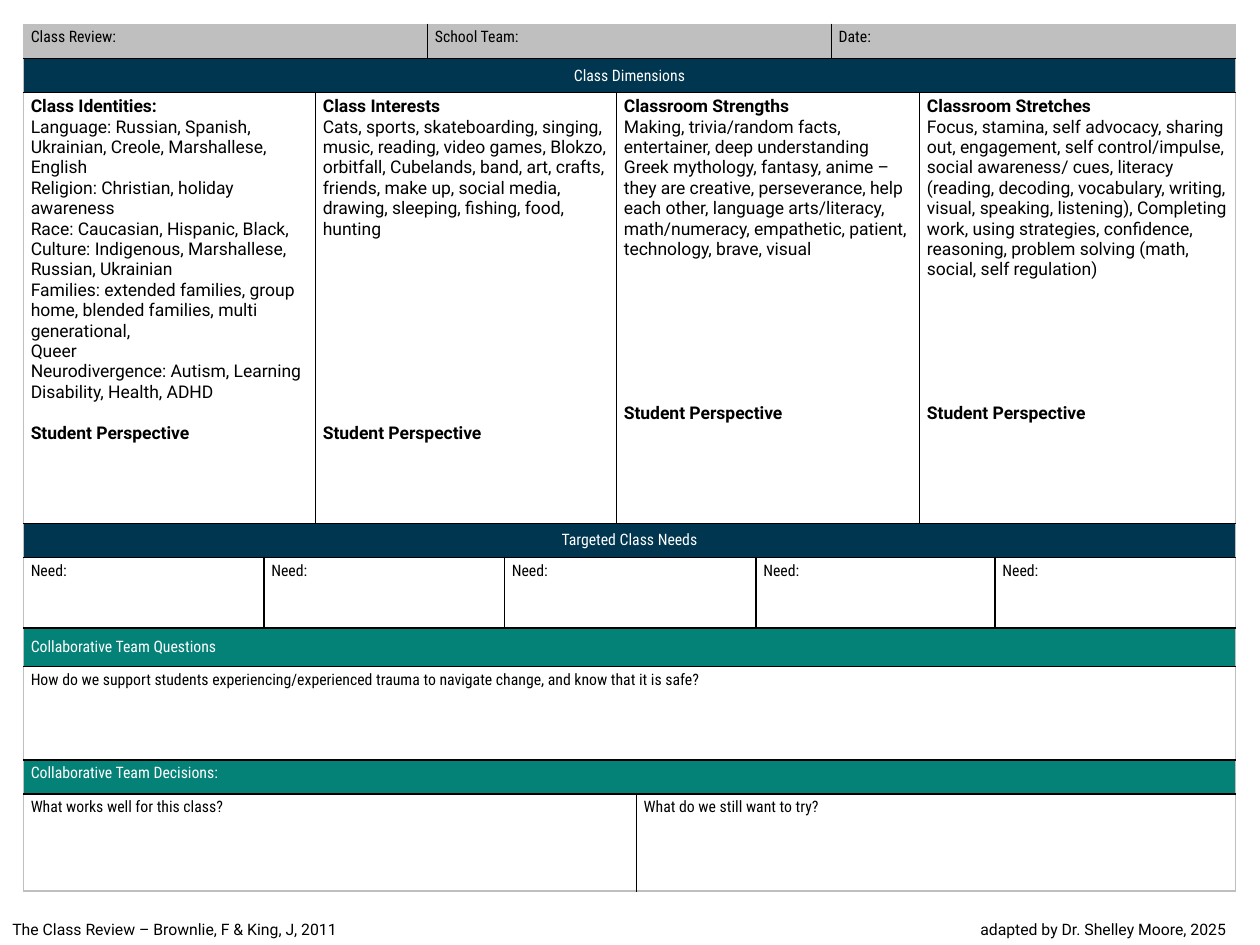
from lxml import etree
from pptx import Presentation
from pptx.dml.color import RGBColor
from pptx.enum.text import MSO_ANCHOR, PP_ALIGN
from pptx.oxml.ns import qn
from pptx.util import Cm, Pt

TOP, MIDDLE = MSO_ANCHOR.TOP, MSO_ANCHOR.MIDDLE
LEFT, CENTER = PP_ALIGN.LEFT, PP_ALIGN.CENTER
BLACK, WHITE, GREY, NAVY, TEAL = "000000", "FFFFFF", "BFBFBF", "00364F", "058278"
BODY, LABEL = "Roboto", "Roboto Condensed"
LINE = 11.7

COLS = [4.85, 1.04, 2.26, 1.55, 2.26, 0.38, 2.41, 1.52, 1.78, 1.52, 4.85]
ROWS = [0.69, 0.69, 8.68, 0.69, 1.42, 0.78, 1.88, 0.69, 1.96]

DIMENSIONS = [
    (2, 1, ["Class Identities:",
            "Language: Russian, Spanish, Ukrainian, Creole, Marshallese, English",
            "Religion: Christian, holiday awareness",
            "Race: Caucasian, Hispanic, Black,",
            "Culture: Indigenous, Marshallese, Russian, Ukrainian",
            "Families: extended families, group home, blended families, multi generational,",
            "Queer",
            "Neurodivergence: Autism, Learning Disability, Health, ADHD"]),
    (3, 9, ["Class Interests",
            "Cats, sports, skateboarding, singing, music, reading, video games, Blokzo, "
            "orbitfall, Cubelands, band, art, crafts, friends, make up, social media, "
            "drawing, sleeping, fishing, food, hunting"]),
    (4, 7, ["Classroom Strengths",
            "Making, trivia/random facts, entertainer, deep understanding Greek mythology, "
            "fantasy, anime – they are creative, perseverance, help each other, language "
            "arts/literacy, math/numeracy, empathetic, patient, technology, brave, visual"]),
    (2, 6, ["Classroom Stretches",
            "Focus, stamina, self advocacy, sharing out, engagement, self control/impulse, "
            "social awareness/ cues, literacy (reading, decoding, vocabulary, writing, "
            "visual, speaking, listening), Completing work, using strategies, confidence, "
            "reasoning, problem solving (math, social, self regulation)"]),
]


def rgb(color):
    """Turn a hex string into a colour."""
    return RGBColor.from_string(color)


def add_run(p, text, size, font, color=BLACK, bold=False):
    """Add one formatted run to a paragraph."""
    r = p.add_run()
    r.text = text
    r.font.size, r.font.name, r.font.bold = Pt(size), font, bold
    r.font.color.rgb = rgb(color)


def set_borders(cell, edges):
    """Draw the cell's borders from a list of (tag, colour)."""
    tcPr = cell._tc.get_or_add_tcPr()
    for i, (tag, color) in enumerate(edges):
        ln = etree.Element(qn(f"a:{tag}"), w=str(Pt(1)))
        fill = etree.SubElement(ln, qn("a:solidFill"))
        etree.SubElement(fill, qn("a:srgbClr"), val=color)
        tcPr.insert(i, ln)


def add_cell(table, row, col, span, fill, anchor=TOP):
    """Merge, fill and border a run of columns, and return its first cell."""
    end = col + span
    edges = [("lnL", BLACK if col else GREY),
             ("lnR", BLACK if end < len(COLS) else GREY),
             ("lnT", BLACK if row else GREY),
             ("lnB", BLACK if row < len(ROWS) - 1 else GREY)]
    first = table.cell(row, col)
    if span > 1:
        first.merge(table.cell(row, end - 1))
    for c in range(col, end):
        cell = table.cell(row, c)
        cell.fill.solid()
        cell.fill.fore_color.rgb = rgb(fill)
        set_borders(cell, edges)
    first.vertical_anchor = anchor
    first.margin_left = first.margin_right = Cm(0.15)
    first.margin_top = first.margin_bottom = Cm(0.08)
    return first


def label_row(table, row, labels, fill=WHITE, color=BLACK, align=LEFT, anchor=TOP):
    """Fill a row with short labels given as (span, text)."""
    col = 0
    for span, text in labels:
        p = add_cell(table, row, col, span, fill, anchor).text_frame.paragraphs[0]
        p.alignment = align
        add_run(p, text, 9, LABEL, color)
        col += span


def dimension_row(table, row):
    """Fill the row of class dimensions, each ending in a student perspective."""
    col = 0
    for span, gap, lines in DIMENSIONS:
        tf = add_cell(table, row, col, span, WHITE).text_frame
        for i, text in enumerate(lines):
            p = tf.add_paragraph() if i else tf.paragraphs[0]
            add_run(p, text, 10, BODY, bold=i == 0)
        p = tf.add_paragraph()
        p.space_before = Pt(gap * LINE)
        add_run(p, "Student Perspective", 10, BODY, bold=True)
        col += span


def review_table(s, left, top):
    """Place the class review table."""
    table = s.shapes.add_table(len(ROWS), len(COLS), Cm(left), Cm(top),
                               Cm(sum(COLS)), Cm(sum(ROWS))).table
    table.first_row = table.horz_banding = False
    for column, width in zip(table.columns, COLS):
        column.width = Cm(width)
    for row, height in zip(table.rows, ROWS):
        row.height = Cm(height)
    full = len(COLS)
    label_row(table, 0, [(3, "Class Review:"), (5, "School Team:"), (3, "Date:")], GREY)
    label_row(table, 1, [(full, "Class Dimensions")], NAVY, WHITE, CENTER, MIDDLE)
    dimension_row(table, 2)
    label_row(table, 3, [(full, "Targeted Class Needs")], NAVY, WHITE, CENTER, MIDDLE)
    label_row(table, 4, [(span, "Need:") for span in (1, 3, 3, 3, 1)])
    label_row(table, 5, [(full, "Collaborative Team Questions")], TEAL, WHITE, anchor=MIDDLE)
    label_row(table, 6, [(full, "How do we support students experiencing/experienced trauma "
                                "to navigate change, and know that it is safe?")])
    label_row(table, 7, [(full, "Collaborative Team Decisions:")], TEAL, WHITE)
    label_row(table, 8, [(6, "What works well for this class?"),
                         (5, "What do we still want to try?")])


def credit_line(s, left, top, width, height):
    """Place the source at the left and the adapter at a right tab stop."""
    tf = s.shapes.add_textbox(Cm(left), Cm(top), Cm(width), Cm(height)).text_frame
    tf.word_wrap = True
    p = tf.paragraphs[0]
    tabs = etree.SubElement(p._p.get_or_add_pPr(), qn("a:tabLst"))
    etree.SubElement(tabs, qn("a:tab"), pos=str(Cm(width - 0.94)), algn="r")
    add_run(p, "The Class Review – Brownlie, F & King, J, 2011\t", 9, BODY)
    add_run(p, "adapted by Dr. Shelley Moore, 2025", 9, BODY)


def main():
    """Build and save the slide."""
    prs = Presentation()
    prs.slide_width, prs.slide_height = Cm(25.4), Cm(19.05)
    s = prs.slides.add_slide(prs.slide_layouts[6])
    review_table(s, 0.47, 0.49)
    credit_line(s, 0, 18.41, 25.4, 0.64)
    prs.save("out.pptx")


if __name__ == "__main__":
    main()
